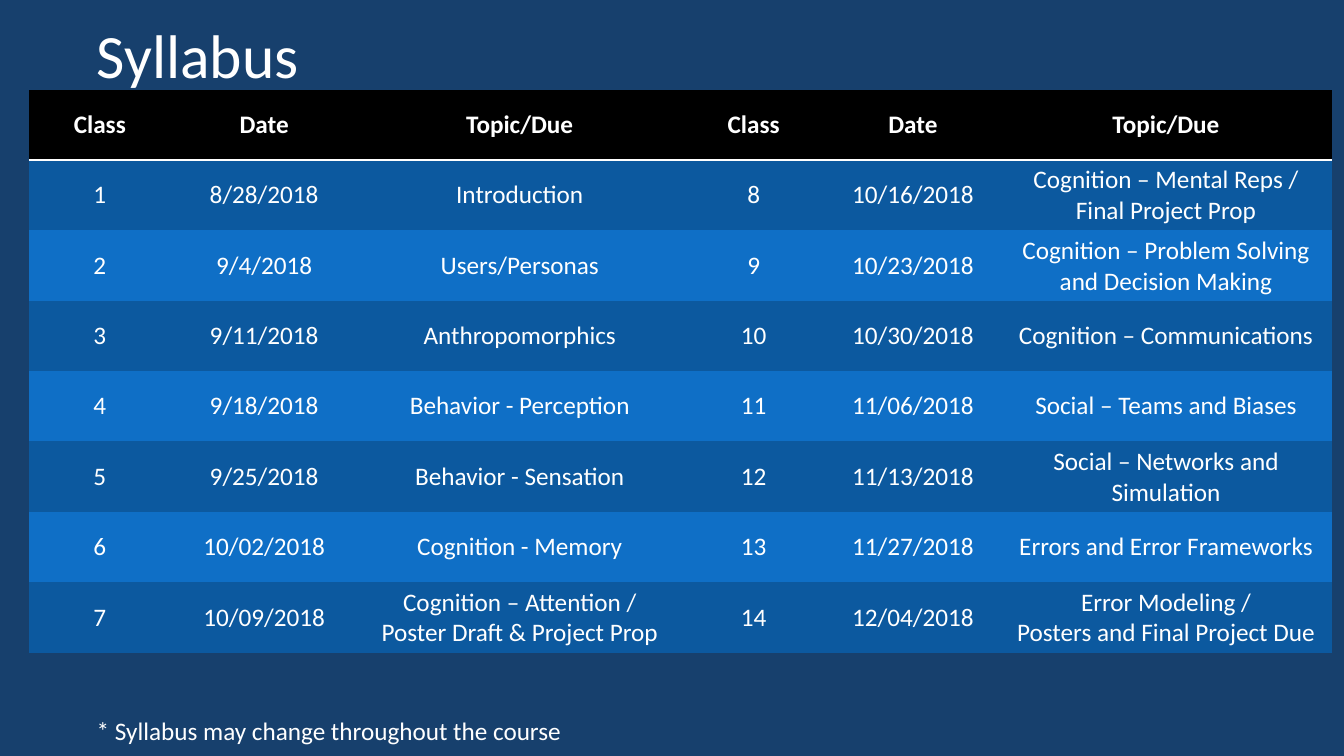
from pptx import Presentation
from pptx.dml.color import RGBColor
from pptx.enum.text import MSO_ANCHOR, PP_ALIGN
from pptx.oxml import parse_xml
from pptx.oxml.ns import nsdecls, qn
from pptx.util import Inches, Pt

MIDDLE, TOP = MSO_ANCHOR.MIDDLE, MSO_ANCHOR.TOP
LEFT, CENTER = PP_ALIGN.LEFT, PP_ALIGN.CENTER

NAVY = RGBColor(0x17, 0x40, 0x6D)
DARK = RGBColor(0x0C, 0x59, 0x9F)
BRIGHT = RGBColor(0x0F, 0x6F, 0xC6)
BLACK = RGBColor(0, 0, 0)
WHITE = RGBColor(255, 255, 255)

PLAIN = "{2D5ABB26-0587-4C30-8999-92F81FD0307C}"  # no style, no grid

HEAD = ["Class", "Date", "Topic/Due"]
FIRST = [
    ("8/28/2018", "Introduction"),
    ("9/4/2018", "Users/Personas"),
    ("9/11/2018", "Anthropomorphics"),
    ("9/18/2018", "Behavior - Perception"),
    ("9/25/2018", "Behavior - Sensation"),
    ("10/02/2018", "Cognition - Memory"),
    ("10/09/2018", "Cognition – Attention / Poster Draft & Project Prop"),
]
SECOND = [
    ("10/16/2018", "Cognition – Mental Reps / Final Project Prop"),
    ("10/23/2018", "Cognition – Problem Solving and Decision Making"),
    ("10/30/2018", "Cognition – Communications"),
    ("11/06/2018", "Social – Teams and Biases"),
    ("11/13/2018", "Social – Networks and Simulation"),
    ("11/27/2018", "Errors and Error Frameworks"),
    ("12/04/2018", "Error Modeling /\nPosters and Final Project Due"),
]
WIDTHS = [1.4, 1.86, 3.21, 1.43, 1.73, 3.29]


class Deck:
    font = "Calibri"
    color = WHITE

    def __init__(self, slide):
        self.slide = slide

    def label(self, frame, text, size=18, bold=False, align=LEFT):
        frame.text = text
        for para in frame.paragraphs:
            para.alignment = align
            font = para.font
            font.name, font.size, font.bold = self.font, Pt(size), bold
            font.color.rgb = self.color

    def text(self, box, text, size=18, anchor=TOP, space=None):
        shape = self.slide.shapes.add_textbox(*map(Inches, box))
        frame = shape.text_frame
        frame.word_wrap = True
        frame.vertical_anchor = anchor
        self.label(frame, text, size)
        frame.paragraphs[0].line_spacing = space

    def rule(self, cell):
        line = parse_xml(
            f'<a:lnB {nsdecls("a")} w="{Pt(2)}"><a:solidFill>'
            f'<a:srgbClr val="{self.color}"/></a:solidFill></a:lnB>')
        cell._tc.get_or_add_tcPr().insert(0, line)

    def table(self, box, widths, rows):
        shape = self.slide.shapes.add_table(
            len(rows), len(widths), *map(Inches, box))
        shape.element.find(".//" + qn("a:tableStyleId")).text = PLAIN
        table = shape.table
        for col, width in zip(table.columns, widths):
            col.width = Inches(width)
        for r, row in enumerate(rows):
            for c, text in enumerate(row):
                cell = table.cell(r, c)
                cell.vertical_anchor = MIDDLE
                self.label(cell.text_frame, text, bold=r == 0, align=CENTER)
                cell.fill.solid()
                band = DARK if r % 2 else BRIGHT
                cell.fill.fore_color.rgb = band if r else BLACK
                if r == 0:
                    self.rule(cell)


def main():
    prs = Presentation()
    prs.slide_width, prs.slide_height = Inches(13.33), Inches(7.5)
    slide = prs.slides.add_slide(prs.slide_layouts[6])
    fill = slide.background.fill
    fill.solid()
    fill.fore_color.rgb = NAVY
    deck = Deck(slide)

    # Title
    deck.text((0.86, -0.14, 11.5, 1.45), "Syllabus", 44, MIDDLE, 0.9)

    # Schedule: two halves side by side, classes numbered in order
    rows = [HEAD * 2]
    for n, (left, right) in enumerate(zip(FIRST, SECOND), 1):
        rows.append([str(n), *left, str(n + len(FIRST)), *right])
    deck.table((0.29, 0.89, 12.92, 5.57), WIDTHS, rows)

    # Footnote
    deck.text((0.86, 7.05, 11.61, 0.4),
              "* Syllabus may change throughout the course")

    prs.save("out.pptx")


if __name__ == "__main__":
    main()
